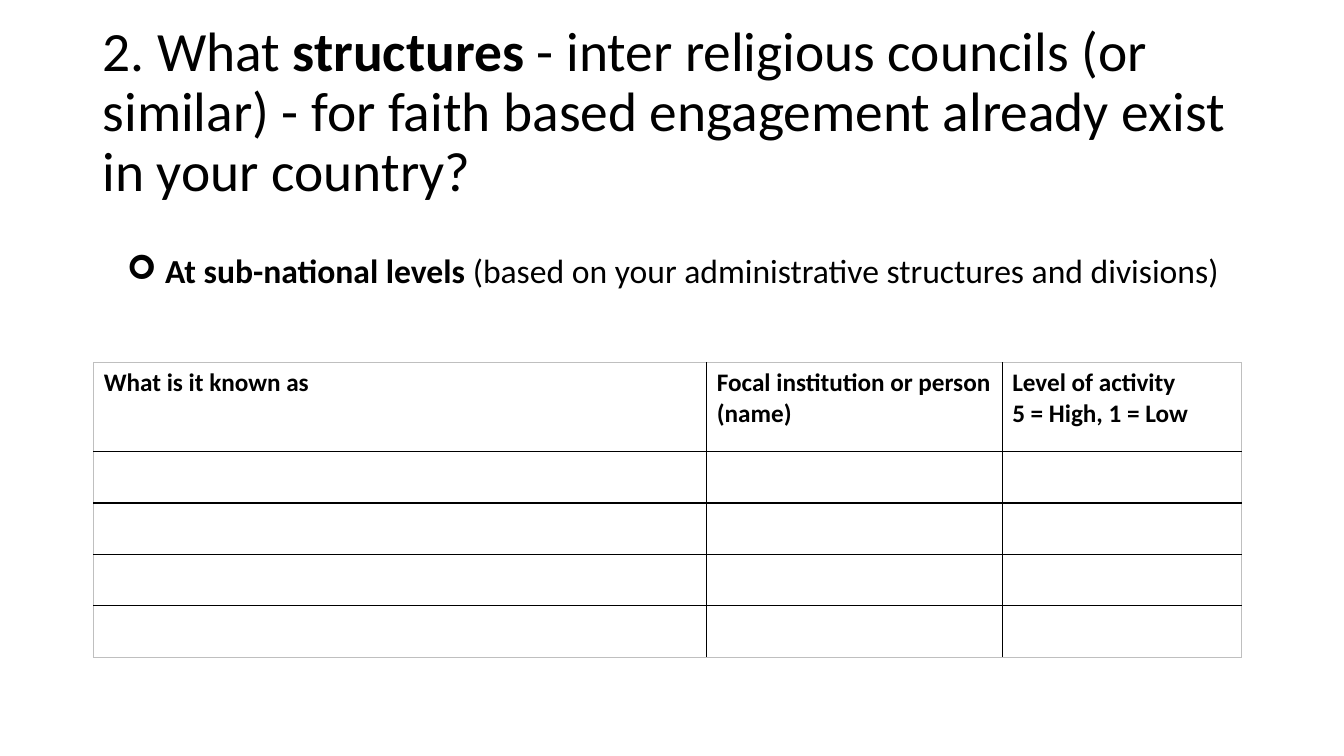
from lxml import etree
from pptx import Presentation
from pptx.dml.color import RGBColor
from pptx.enum.text import MSO_ANCHOR
from pptx.oxml.ns import qn
from pptx.util import Inches, Pt

MIDDLE = MSO_ANCHOR.MIDDLE
BLACK = RGBColor(0x00, 0x00, 0x00)
GREY = RGBColor(0xBF, 0xBF, 0xBF)
FONT = "Calibri"


def write(par, text, size, bold=False):
    """Add one run of text to a paragraph."""
    run = par.add_run()
    run.text = text
    font = run.font
    font.name, font.size, font.bold = FONT, Pt(size), bold
    font.color.rgb = BLACK


def rule(cell, side, color):
    """Draw one border of a cell; sides go in the order L, R, T, B."""
    line = etree.SubElement(cell._tc.get_or_add_tcPr(), qn("a:ln" + side), w=str(Pt(1)))
    fill = etree.SubElement(line, qn("a:solidFill"))
    etree.SubElement(fill, qn("a:srgbClr"), val=str(color))


prs = Presentation()
prs.slide_width, prs.slide_height = Inches(13.33), Inches(7.5)
slide = prs.slides.add_slide(prs.slide_layouts[6])
left, wide = Inches(0.92), Inches(11.5)

# Title
title = slide.shapes.add_textbox(left, Inches(0.4), wide, Inches(1.45))
frame = title.text_frame
frame.word_wrap = True
frame.vertical_anchor = MIDDLE
par = frame.paragraphs[0]
par.line_spacing = 0.9
write(par, "2. What ", 39.6)
write(par, "structures", 39.6, True)
write(par, " - inter religious councils (or similar) - for faith based "
      "engagement already exist in your country?", 39.6)

# Bulleted subtitle
body = slide.shapes.add_textbox(left, Inches(2.48), wide, Inches(0.61))
frame = body.text_frame
frame.word_wrap = True
par = frame.paragraphs[0]
par.level = 1
par.line_spacing = 0.9
par.space_before = Pt(5)
write(par, "At sub-national levels", 24, True)
write(par, " (based on your administrative structures and divisions)", 24)
props = par._p.get_or_add_pPr()
props.set("marL", str(Inches(0.62)))
props.set("indent", str(Inches(-0.38)))
etree.SubElement(props, qn("a:buFont"), typeface="Wingdings")
etree.SubElement(props, qn("a:buChar"), char="➢")

# Table of structures
heads = [
    ["What is it known as"],
    ["Focal institution or person (name)"],
    ["Level of activity", "5 = High, 1 = Low"],
]
cols = [6.08, 2.93, 2.37]
rows = [0.88] + [0.51] * 4
table = slide.shapes.add_table(
    len(rows), len(cols), Inches(0.93), Inches(3.6),
    Inches(sum(cols)), Inches(sum(rows))).table
table.first_row = table.horz_banding = False
for c, width in enumerate(cols):
    table.columns[c].width = Inches(width)

for r, height in enumerate(rows):
    table.rows[r].height = Inches(height)
    for c in range(len(cols)):
        cell = table.cell(r, c)
        edges = {"L": c == 0, "R": c == len(cols) - 1,
                 "T": r == 0, "B": r == len(rows) - 1}
        for side, outer in edges.items():
            rule(cell, side, GREY if outer else BLACK)
        cell.fill.background()

for c, lines in enumerate(heads):
    frame = table.cell(0, c).text_frame
    for i, text in enumerate(lines):
        par = frame.add_paragraph() if i else frame.paragraphs[0]
        write(par, text, 18, True)

prs.save("out.pptx")
